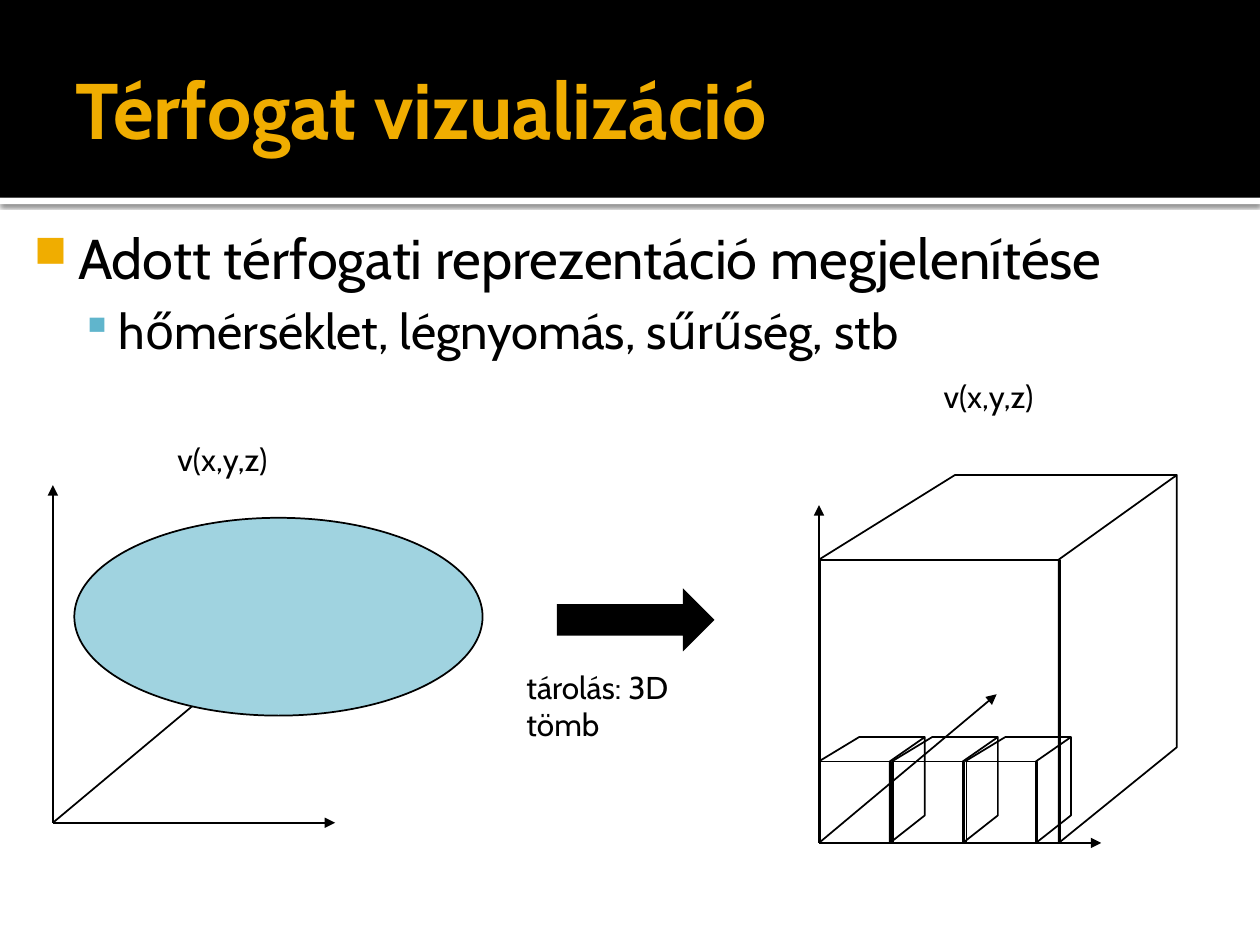
from lxml import etree
from pptx import Presentation
from pptx.dml.color import RGBColor
from pptx.enum.shapes import MSO_CONNECTOR, MSO_SHAPE
from pptx.enum.text import MSO_ANCHOR
from pptx.oxml.ns import qn
from pptx.util import Inches, Pt

RECTANGLE = MSO_SHAPE.RECTANGLE
ELLIPSE = MSO_SHAPE.OVAL
RIGHT_ARROW = MSO_SHAPE.RIGHT_ARROW
STRAIGHT = MSO_CONNECTOR.STRAIGHT
TOP = MSO_ANCHOR.TOP
MIDDLE = MSO_ANCHOR.MIDDLE
COLUMNS, ROWS = 10, 7.5


def color(value):
    return RGBColor.from_string(value)


def add_node(parent, tag, **attributes):
    return etree.SubElement(parent, qn(tag), attributes)


class SlideBuilder:
    font = "Cabin"
    black = "000000"
    white = "FFFFFF"
    gold = "F0AD00"
    blue = "60B5CC"
    pale_blue = "A0D3E0"

    def __init__(self, deck):
        self.slide = deck.slides.add_slide(deck.slide_layouts[6])
        self.shapes = self.slide.shapes
        self.column = deck.slide_width / COLUMNS
        self.row = deck.slide_height / ROWS

    def across(self, columns):
        return round(columns * self.column)

    def down(self, rows):
        return round(rows * self.row)

    def area(self, left, top, width, height):
        return self.across(left), self.down(top), self.across(width), self.down(height)

    def paint(self, shape, fill, outlined):
        shape.shadow.inherit = False
        if fill:
            shape.fill.solid()
            shape.fill.fore_color.rgb = color(fill)
        else:
            shape.fill.background()
        if outlined:
            shape.line.color.rgb = color(self.black)
            shape.line.width = Pt(1)
        else:
            shape.line.fill.background()

    def shape(self, kind, area, fill=None, outlined=False):
        shape = self.shapes.add_shape(kind, *self.area(*area))
        self.paint(shape, fill, outlined)
        return shape

    def drop_shadow(self, shape):
        effects = shape._element.spPr.find(qn("a:effectLst"))
        shadow = add_node(effects, "a:outerShdw", blurRad=str(Pt(2.5)),
                          dist=str(Pt(0.8)), dir="5400000", rotWithShape="0")
        shade = add_node(shadow, "a:srgbClr", val=self.black)
        add_node(shade, "a:alpha", val="60000")

    def text_box(self, area, margins=(0.1, 0.05, 0.1, 0.05), anchor=TOP):
        frame = self.shapes.add_textbox(*self.area(*area)).text_frame
        frame.word_wrap = True
        frame.vertical_anchor = anchor
        (frame.margin_left, frame.margin_top,
         frame.margin_right, frame.margin_bottom) = map(Inches, margins)
        return frame

    def run(self, para, text, size, ink=black, bold=False):
        span = para.add_run()
        span.text = text
        span.font.name = self.font
        span.font.size = Pt(size)
        span.font.bold = bold
        span.font.color.rgb = color(ink)

    def label(self, text, area):
        self.run(self.text_box(area).paragraphs[0], text, 18)

    def bullet(self, para, symbol, ink, share, margin, indent):
        properties = para._p.get_or_add_pPr()
        properties.set("marL", str(Inches(margin)))
        properties.set("indent", str(Inches(indent)))
        shade = add_node(properties, "a:buClr")
        add_node(shade, "a:srgbClr", val=ink)
        add_node(properties, "a:buSzPct", val=str(share * 1000))
        add_node(properties, "a:buChar", char=symbol)

    def arrow(self, start, end):
        line = self.shapes.add_connector(
            STRAIGHT, self.across(start[0]), self.down(start[1]),
            self.across(end[0]), self.down(end[1]))
        line.line.color.rgb = color(self.black)
        line.line.width = Pt(1)
        add_node(line.line._get_or_add_ln(), "a:tailEnd", type="triangle")
        add_node(line._element.spPr, "a:effectLst")

    def axes(self, left, bottom):
        origin = left, bottom
        for reach, rise in ((0, 2.68), (2.24, 0), (1.41, 1.18)):
            self.arrow(origin, (left + reach, bottom - rise))

    def cube(self, left, top, width, height):
        self.shape(RECTANGLE, (left + 0.01, top + 0.23 * height,
                               0.67 * width, 0.77 * height), outlined=True)
        shares = ((0, 0.23), (0.38, 0), (1, 0), (0.67, 0.23),
                  (0.67, 1), (1, 0.74), (1, 0))
        points = [(self.across(left + x * width), self.down(top + y * height))
                  for x, y in shares]
        builder = self.shapes.build_freeform(*points[0])
        builder.add_line_segments(points[1:], close=False)
        self.paint(builder.convert_to_shape(), None, True)


def main():
    deck = Presentation()
    deck.slide_width, deck.slide_height = Inches(10), Inches(7.5)
    page = SlideBuilder(deck)

    divider = page.shape(RECTANGLE, (0, 1.57, COLUMNS, 0.05), page.white)
    page.drop_shadow(divider)
    page.shape(RECTANGLE, (0, 0, COLUMNS, 1.57), page.black)
    title = page.text_box((0.5, 0.17, 9, 1.37), (0.1, 0.05, 0.05, 0.05), MIDDLE)
    page.run(title.paragraphs[0], "Térfogat vizualizáció", 45, page.gold, True)

    body = page.text_box((0.08, 1.67, 9.83, 5.75), (0.06, 0.1, 0.1, 0.05))
    topic = body.paragraphs[0]
    page.bullet(topic, "■", page.gold, 80, 0.48, -0.35)
    page.run(topic, "Adott térfogati reprezentáció megjelenítése", 32)
    examples = body.add_paragraph()
    examples.level = 1
    examples.space_before = Pt(5.6)
    page.bullet(examples, "▪", page.blue, 90, 0.8, -0.3)
    page.run(examples, "hőmérséklet, légnyomás, sűrűség, stb", 28)

    page.axes(0.42, 6.53)
    page.shape(ELLIPSE, (0.59, 4.11, 3.24, 1.57), page.pale_blue, True)
    page.label("v(x,y,z)", (1.31, 3.44, 2.11, 0.48))

    page.axes(6.5, 6.69)
    page.label("v(x,y,z)", (7.39, 2.94, 2.11, 0.48))
    page.cube(6.5, 3.77, 2.84, 2.92)
    for index in range(3):
        page.cube(6.5 + index * 0.58, 5.85, 0.84, 0.84)

    page.label("tárolás: 3D tömb", (4.08, 5.25, 1.92, 0.4))
    page.shape(RIGHT_ARROW, (4.42, 4.67, 1.25, 0.5), page.black)
    deck.save("out.pptx")


if __name__ == "__main__":
    main()
